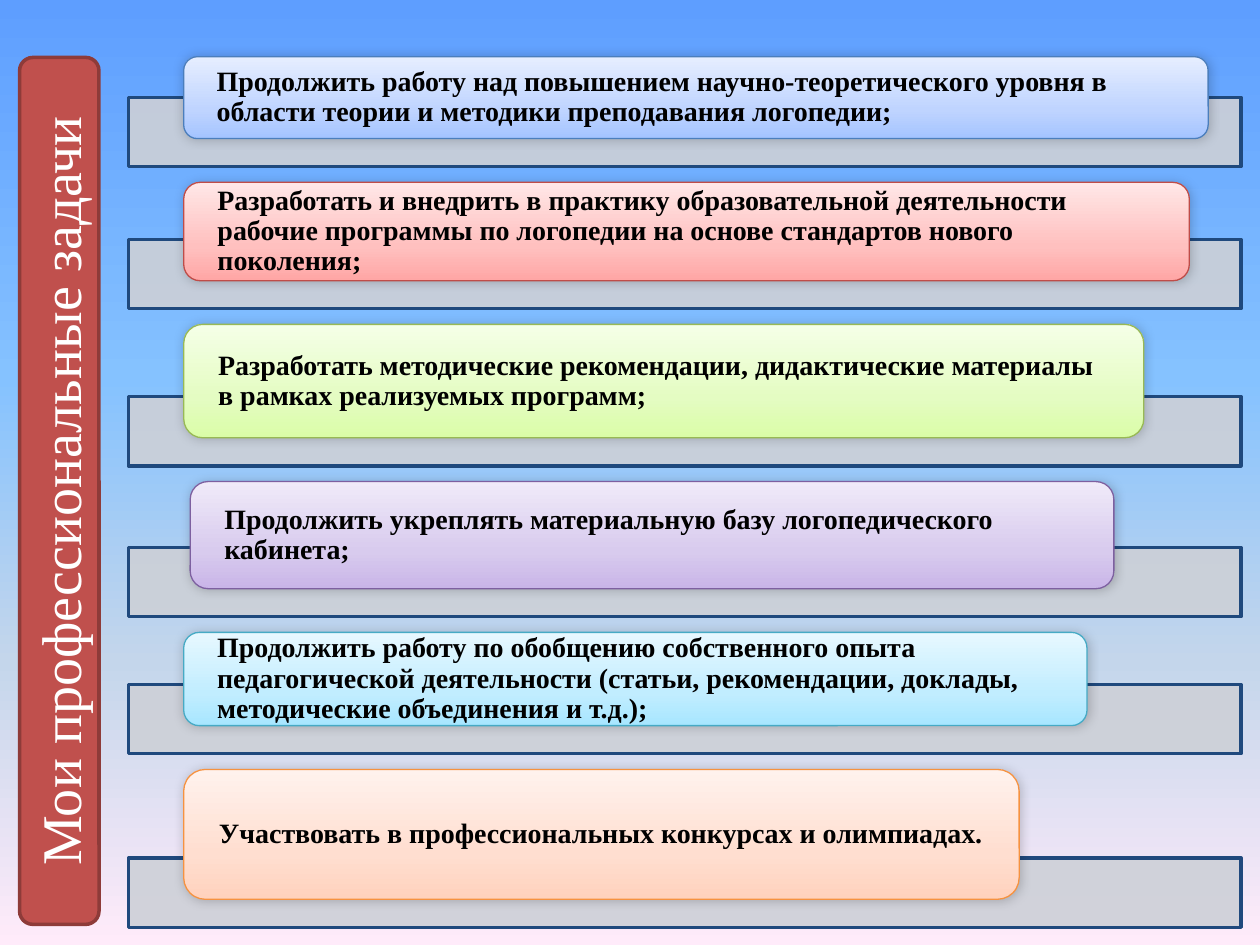
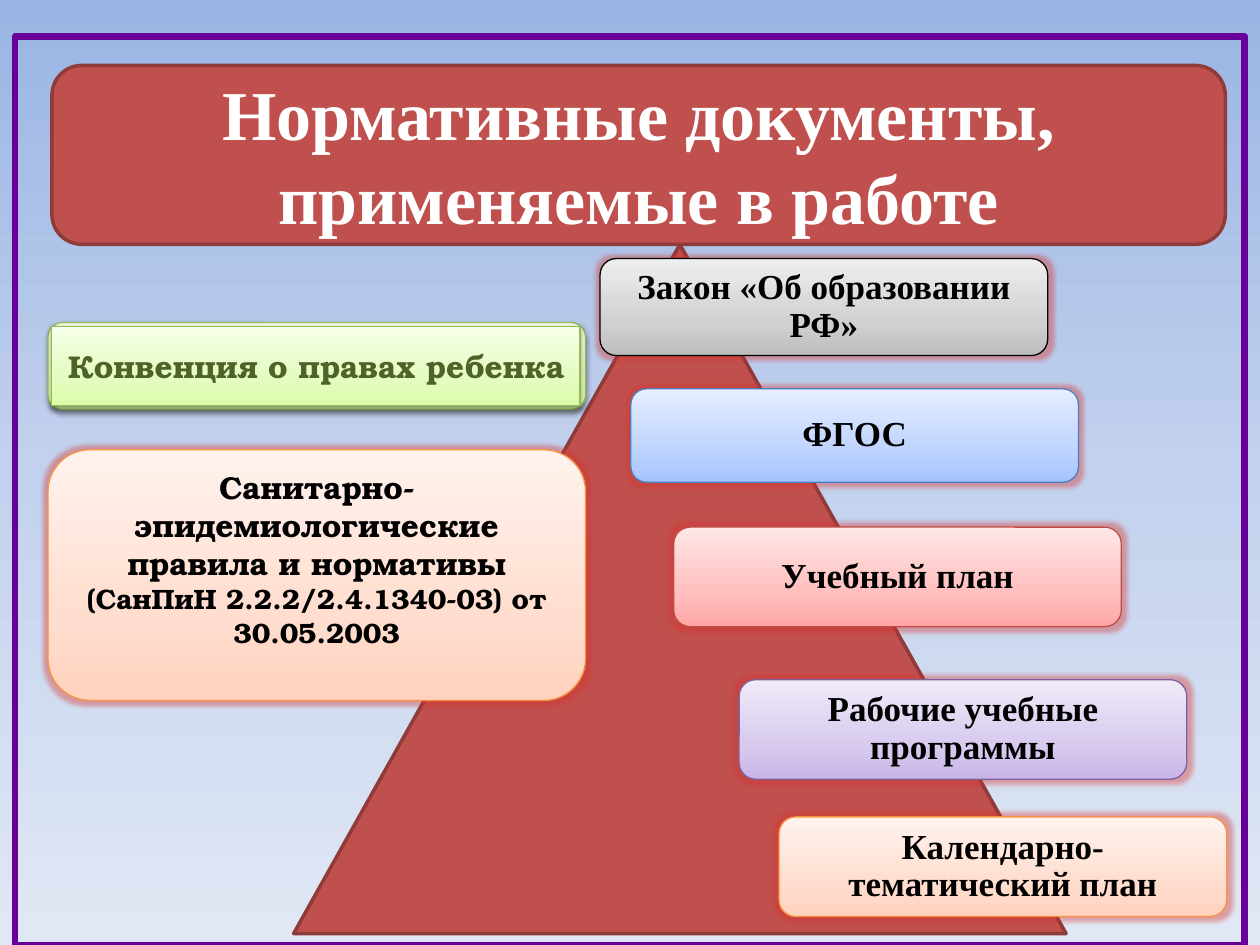
from lxml.etree import SubElement
from pptx import Presentation
from pptx.dml.color import RGBColor
from pptx.enum.shapes import MSO_SHAPE
from pptx.enum.text import MSO_ANCHOR, PP_ALIGN
from pptx.oxml.ns import qn
from pptx.util import Pt

COLORS = {
    "black": "000000", "white": "FFFFFF", "olive": "4F6228", "glow": "D8322C",
    "title": "C0504D", "title_line": "8E3B39",
    "bar": "CDD0D7", "bar_line": "1F497D", "frame": "660099",
}
# Card styles: outline, then gradient stops from bottom to top
CARDS = {
    "gray": ("000000", ["BDBDBD", "D1D1D1", "EEEEEE"]),
    "blue": ("4B7EBC", ["A4C4FF", "BFD4FF", "E6EEFF"]),
    "red": ("BF4C48", ["FFA6A5", "FFC0BF", "FFE7E7"]),
    "green": ("98B955", ["DAFDA7", "E4FCC2", "F5FFE7"]),
    "violet": ("7D60A0", ["C9B5E8", "D8CBEE", "F0EAF9"]),
    "aqua": ("46AAC5", ["A7E6FF", "C1EDFF", "E7F8FF"]),
    "orange": ("F69240", ["FFD2BD", "FFDED0", "FFF2ED"]),
}
TITLE = dict(fill=COLORS["title"], line=COLORS["title_line"], weight=2,
             color=COLORS["white"], align=PP_ALIGN.CENTER)
SOFT_SHADOW = ("outerShdw", dict(blurRad=Pt(6), dist=0, dir=18900000, rotWithShape=0), "000000", 20)
LOW_SHADOW = ("outerShdw", dict(blurRad=Pt(3.1), dist=Pt(1.6), dir=5400000, rotWithShape=0), "000000", 38)
RED_GLOW = ("glow", dict(rad=Pt(5)), COLORS["glow"], 40)


def fill_gradient(fill, element, colors, positions, angle):
    fill.gradient()
    fill.gradient_angle = angle
    stops = next(element.iter(qn("a:gsLst")))
    for stop in list(stops):
        stops.remove(stop)
    for color, position in zip(colors, positions):
        stop = SubElement(stops, qn("a:gs"), pos=str(position * 1000))
        SubElement(stop, qn("a:srgbClr"), val=color)


def add_box(slide, text, box, *, kind=MSO_SHAPE.ROUNDED_RECTANGLE, card=None, fill=None,
            line=None, weight=0.75, alpha=None, effect=None, font="Times New Roman", size=20,
            color=COLORS["black"], bold=True, align=PP_ALIGN.LEFT, anchor=MSO_ANCHOR.MIDDLE,
            insets=(7.2, 3.6, 7.2, 3.6), spacing=1.0):
    """Add a shape; text is a string or a list of (string, size) runs."""
    shape = slide.shapes.add_shape(kind, *[Pt(value) for value in box])
    shape.shadow.inherit = False
    if card:
        line, colors = CARDS[card]
        fill_gradient(shape.fill, shape.element, colors, [0, 35, 100], 90)
    elif fill:
        shape.fill.solid()
        shape.fill.fore_color.rgb = RGBColor.from_string(fill)
        if alpha:
            SubElement(next(shape.element.iter(qn("a:srgbClr"))), qn("a:alpha"), val=str(alpha * 1000))
    else:
        shape.fill.background()
    shape.line.color.rgb = RGBColor.from_string(line)
    shape.line.width = Pt(weight)
    if effect:
        tag, attributes, effect_color, opacity = effect
        effects = next(shape.element.iter(qn("a:effectLst")))
        node = SubElement(effects, qn("a:" + tag), {key: str(value) for key, value in attributes.items()})
        tint = SubElement(node, qn("a:srgbClr"), val=effect_color)
        SubElement(tint, qn("a:alpha"), val=str(opacity * 1000))
    if text:
        frame = shape.text_frame
        frame.word_wrap = True
        frame.vertical_anchor = anchor
        frame.margin_left, frame.margin_top, frame.margin_right, frame.margin_bottom = map(Pt, insets)
        paragraph = frame.paragraphs[0]
        paragraph.alignment = align
        paragraph.line_spacing = spacing
        for words, run_size in [(text, size)] if isinstance(text, str) else text:
            run = paragraph.add_run()
            run.text = words
            run.font.name = font
            run.font.size = Pt(run_size)
            run.font.bold = bold
            run.font.color.rgb = RGBColor.from_string(color)
    return shape


presentation = Presentation()
presentation.slide_width, presentation.slide_height = Pt(720), Pt(540)
blank = presentation.slide_layouts[6]

# Slide 1: professional tasks
slide = presentation.slides.add_slide(blank)
fill_gradient(slide.background.fill, slide.element,
              ["5E9EFF", "85C2FF", "C4D6EB", "FFEBFA"], [0, 40, 70, 100], 270)

# Task cards, each overlapping its gray bar; the next card starts below the bar
tasks = [
    ("blue", 105, 585.4, 46.8, "Продолжить работу над повышением научно-теоретического уровня "
     "в области теории и методики преподавания логопедии;"),
    ("red", 105, 574.6, 56.2, "Разработать и внедрить в практику образовательной деятельности "
     "рабочие программы по логопедии на основе стандартов нового поколения;"),
    ("green", 105, 548.6, 64.8, "Разработать методические рекомендации, дидактические материалы "
     "в рамках реализуемых программ;"),
    ("violet", 108.7, 527.8, 61.2, "Продолжить укреплять материальную базу логопедического кабинета;"),
    ("aqua", 105, 516.2, 53.3, "Продолжить работу по обобщению собственного опыта педагогической "
     "деятельности (статьи, рекомендации, доклады, методические объединения и т.д.);"),
    ("orange", 105, 477.4, 74.2, "Участвовать в профессиональных конкурсах и олимпиадах."),
]
bar_height, overlap, gap = 39.6, 23.6, 9
top = 32.4
for card, left, width, height, text in tasks:
    bar_top = top + height - overlap
    add_box(slide, None, (73.4, bar_top, 635.8, bar_height), kind=MSO_SHAPE.RECTANGLE,
            fill=COLORS["bar"], alpha=90, line=COLORS["bar_line"], weight=2)
    add_box(slide, text, (left, top, width, height), card=card, effect=SOFT_SHADOW,
            size=16, spacing=0.9, insets=(16.56, 0, 16.56, 0))
    top = bar_top + bar_height + gap

# Vertical title
title = add_box(slide, "Мои профессиональные задачи", (-213.8, 257.8, 495.4, 45.4),
                size=32, bold=False, **TITLE)
title.rotation = 270

# Slide 2: regulatory documents
slide = presentation.slides.add_slide(blank)
fill_gradient(slide.background.fill, slide.element, ["9AB5E4", "C2D1ED", "E1E8F5"], [0, 50, 100], 270)

# Frame and pyramid
add_box(slide, None, (8.6, 20.9, 702.7, 519.1), kind=MSO_SHAPE.RECTANGLE,
        line=COLORS["frame"], weight=3.75)
add_box(slide, None, (167.8, 139.7, 441.4, 393.8), kind=MSO_SHAPE.ISOSCELES_TRIANGLE,
        fill=COLORS["title"], line=COLORS["title_line"], weight=2)

# Documents down the right slope
documents = [
    ("gray", 342.9, 147.8, 55.4, "Закон «Об образовании РФ»"),
    ("blue", 360.5, 222.2, 53.4, "ФГОС"),
    ("red", 385, 301.2, 56.9, "Учебный план"),
    ("violet", 422.4, 388.4, 56.9, "Рабочие учебные программы"),
    ("orange", 445.2, 466.8, 56.9, "Календарно-тематический план"),
]
for card, left, top, height, text in documents:
    add_box(slide, text, (left, top, 255.8, height), card=card, effect=RED_GLOW,
            align=PP_ALIGN.CENTER, spacing=0.9, insets=(5.76,) * 4)

# Title
add_box(slide, "Нормативные документы, применяемые в работе", (29.7, 37.4, 670.5, 102.2),
        size=40, **TITLE)

# Documents on the left
add_box(slide, None, (27.4, 184.3, 307.2, 49.7), card="green", effect=LOW_SHADOW)
add_box(slide, "Конвенция о правах ребенка", (29.6, 186.5, 301.8, 45.4), kind=MSO_SHAPE.RECTANGLE,
        card="green", effect=LOW_SHADOW, font="TeX Gyre Bonum", size=18, color=COLORS["olive"],
        insets=(9.3, 3.6, 0, 3.6))
add_box(slide, [("Санитарно-эпидемиологические правила и нормативы ", 18),
                ("(СанПиН 2.2.2/2.4.1340-03) от 30.05.2003", 16)],
        (27.4, 257, 307.2, 143.3), card="orange", effect=RED_GLOW, font="TeX Gyre Bonum",
        align=PP_ALIGN.CENTER, anchor=MSO_ANCHOR.TOP)

presentation.save("out.pptx")
